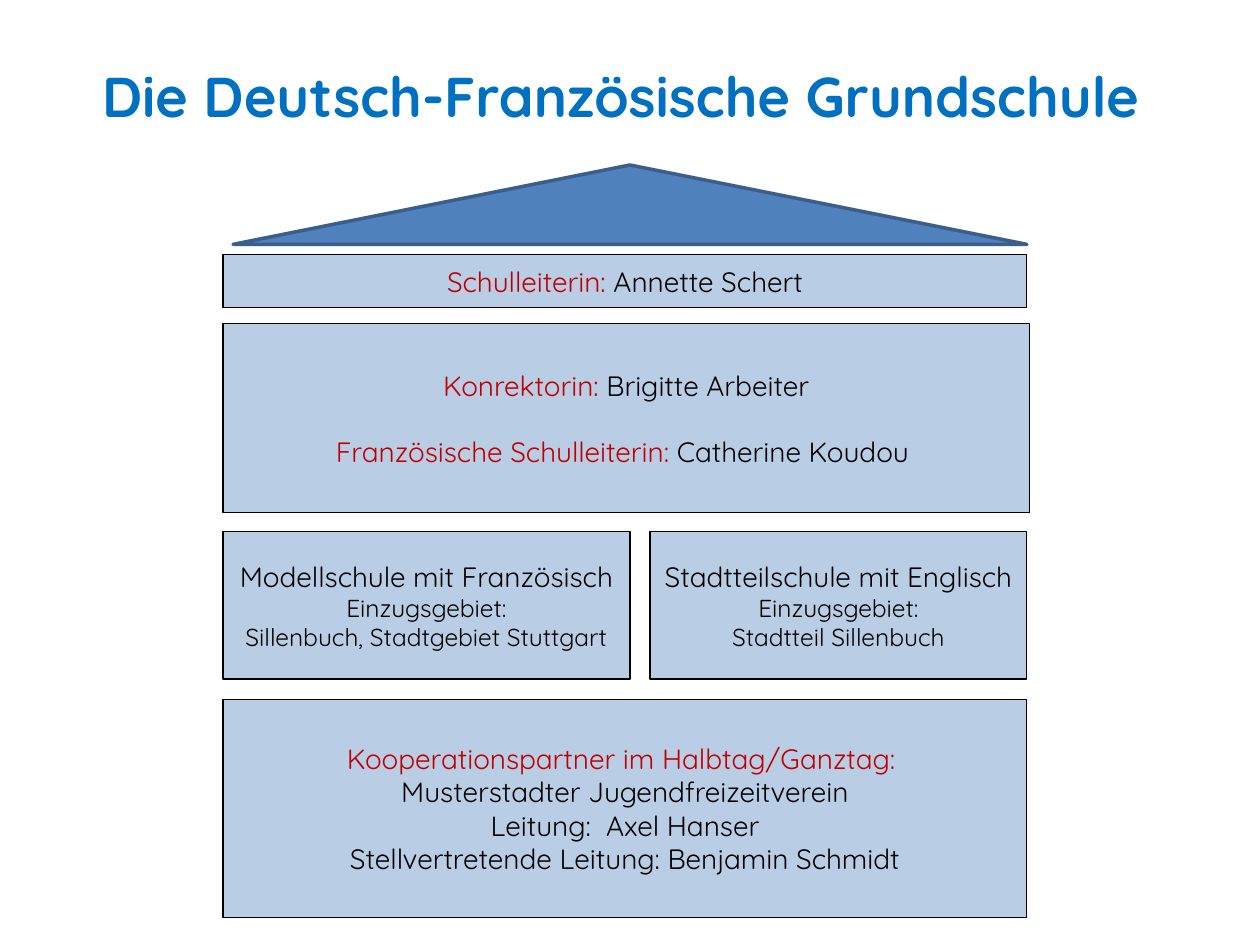
from pptx import Presentation
from pptx import util as u
from pptx.dml.color import RGBColor
from pptx.enum import shapes, text

COLS, ROWS = 100, 75
CELL = u.Inches(0.1)
FONT = "Quicksand"
RED, BLACK, BLUE = "C00000", "000000", "0070C0"
PANEL, ROOF, ROOF_EDGE = "B9CDE5", "4F81BD", "3A5F8C"
LEFT, RIGHT = 17.7, 81.5
WIDTH = RIGHT - LEFT


def rgb(value):
    return RGBColor.from_string(value)


def grid(*cells):
    return [round(c * CELL) for c in cells]


def set_format(obj, **values):
    for name, value in values.items():
        setattr(obj, name, value)


def add_paragraph(tf, runs, first, size=16, bold=False, before=0):
    p = tf.paragraphs[0] if first else tf.add_paragraph()
    set_format(p, alignment=text.PP_ALIGN.CENTER, space_before=u.Pt(before))
    for words, color in runs:
        r = p.add_run()
        r.text = words
        set_format(r.font, name=FONT, size=u.Pt(size), bold=bold)
        r.font.color.rgb = rgb(color)


def fill_text(sp, paragraphs, wrap):
    tf = sp.text_frame
    set_format(tf, word_wrap=wrap, vertical_anchor=text.MSO_ANCHOR.MIDDLE)
    for i, (runs, values) in enumerate(paragraphs):
        add_paragraph(tf, runs, i == 0, **values)


def add_block(s, kind, box, fill, line, width):
    sp = s.shapes.add_shape(kind, *grid(*box))
    sp.shadow.inherit = False
    sp.fill.solid()
    sp.fill.fore_color.rgb = rgb(fill)
    sp.line.color.rgb = rgb(line)
    sp.line.width = u.Pt(width)
    return sp


def add_panel(s, box, paragraphs):
    sp = add_block(s, shapes.MSO_SHAPE.RECTANGLE, box, PANEL, BLACK, 0.75)
    fill_text(sp, paragraphs, False)


def add_title(s, box, words):
    sp = s.shapes.add_textbox(*grid(*box))
    fill_text(sp, [([(words, BLUE)], {"size": 32, "bold": True})], True)


def role(label, name, **values):
    return [(label, RED), (name, BLACK)], values


def plain(words, color=BLACK, **values):
    return [(words, color)], values


def branch(name, area):
    return [plain(name), plain("Einzugsgebiet:", size=14), plain(area, size=14)]


def main():
    prs = Presentation()
    set_format(prs, slide_width=COLS * CELL, slide_height=ROWS * CELL)
    s = prs.slides.add_slide(prs.slide_layouts[6])

    add_title(s, (2, 1.3, 95.8, 12.5), "Die Deutsch-Französische Grundschule ")
    add_block(s, shapes.MSO_SHAPE.ISOSCELES_TRIANGLE,
              (18.5, 13.1, 63, 6.3), ROOF, ROOF_EDGE, 2)
    add_panel(s, (LEFT, 20.2, WIDTH, 4.2), [role("Schulleiterin: ", "Annette Schert")])
    add_panel(s, (LEFT, 25.7, 64, 15), [
        role("Konrektorin: ", "Brigitte Arbeiter"),
        role("Französische Schulleiterin: ", "Catherine Koudou ", before=19),
    ])
    branches = [
        (LEFT, 32.3, "Modellschule mit Französisch", "Sillenbuch, Stadtgebiet Stuttgart"),
        (51.6, 29.9, "Stadtteilschule mit Englisch", "Stadtteil Sillenbuch"),
    ]
    for x, width, name, area in branches:
        add_panel(s, (x, 42.2, width, 11.7), branch(name, area))
    add_panel(s, (LEFT, 55.5, WIDTH, 17.3), [
        plain("Kooperationspartner im Halbtag/Ganztag: ", RED),
        plain("Musterstadter Jugendfreizeitverein"),
        plain("Leitung:  Axel Hanser"),
        plain("Stellvertretende Leitung: Benjamin Schmidt"),
    ])
    prs.save("out.pptx")


if __name__ == "__main__":
    main()
